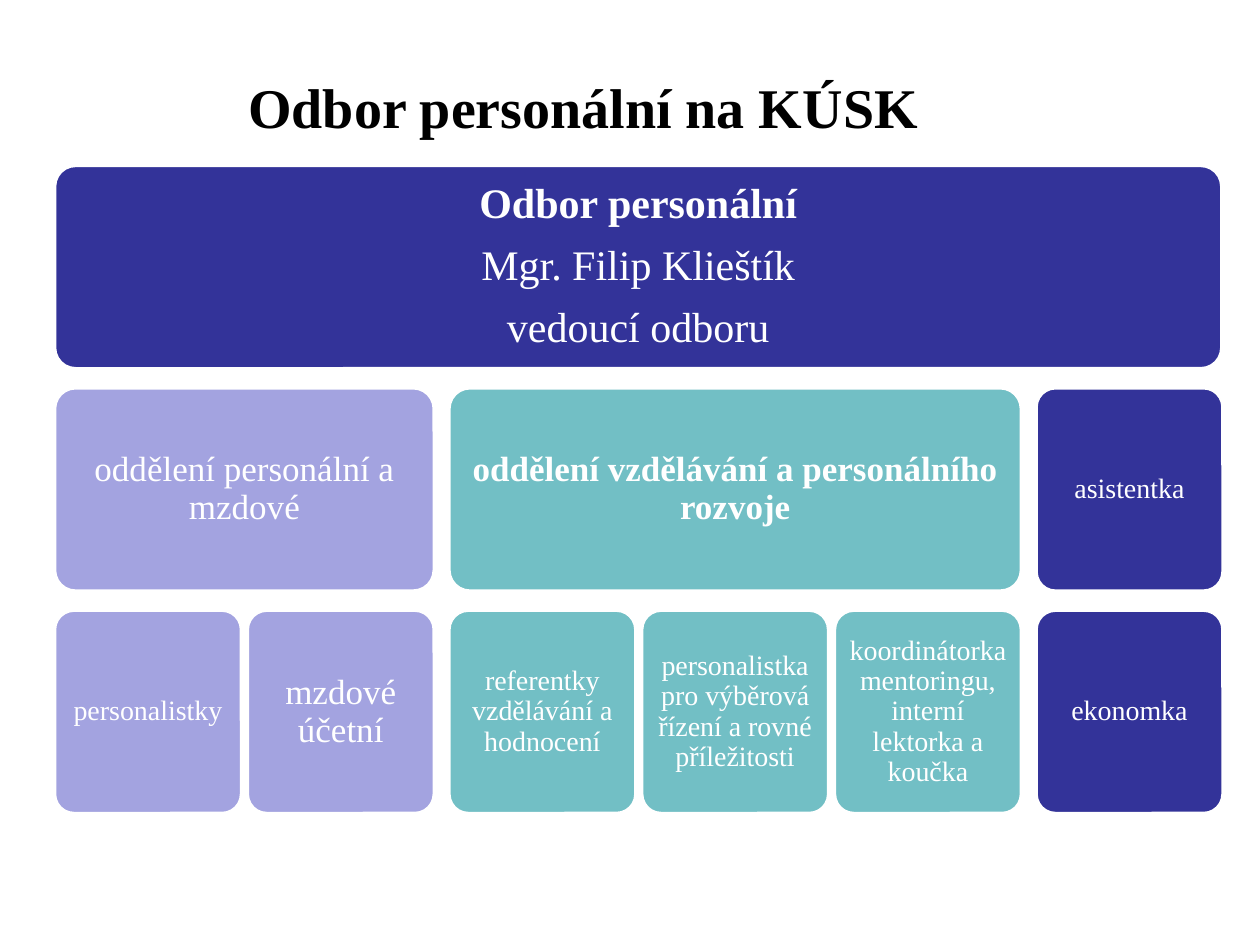
import pptx
import pptx.util
from pptx.dml.color import RGBColor
from pptx.enum.shapes import MSO_SHAPE
from pptx.enum.text import MSO_ANCHOR, PP_ALIGN

NAVY = RGBColor(0x33, 0x33, 0x99)
LILAC = RGBColor(0xA3, 0xA3, 0xE0)
TEAL = RGBColor(0x72, 0xBF, 0xC5)
WHITE = RGBColor(0xFF, 0xFF, 0xFF)
BLACK = RGBColor(0x00, 0x00, 0x00)
FONT = "Times New Roman"

# Chart grid in inches: six columns in three groups, three rows
CARD_WIDTH, CARD_HEIGHT = 1.47, 1.6
CARD_GAP, GROUP_GAP = 0.06, 0.13

# Each group: colour, head (text, size, bold), cards below it (text, size)
GROUPS = [
    (LILAC, ("oddělení personální a mzdové", 20, False),
     [("personalistky", 16), ("mzdové účetní", 20)]),
    (TEAL, ("oddělení vzdělávání a personálního rozvoje", 20, True),
     [("referentky vzdělávání a hodnocení", 16),
      ("personalistka pro výběrová řízení a rovné příležitosti", 16),
      ("koordinátorka mentoringu, interní lektorka a koučka", 16)]),
    (NAVY, ("asistentka", 16, False), [("ekonomka", 16)]),
]


def style_text(para, size, bold, color):
    for span in para.runs:
        span.font.name = FONT
        span.font.size = pptx.util.Pt(size)
        span.font.bold = bold
        span.font.color.rgb = color


def set_margins(frame, inset):
    frame.margin_left = frame.margin_right = pptx.util.Inches(inset)
    frame.margin_top = frame.margin_bottom = pptx.util.Inches(inset)


def add_title(page, left, top, width, height):
    box = page.shapes.add_textbox(*map(pptx.util.Inches, (left, top, width, height)))
    frame = box.text_frame
    frame.word_wrap = True
    frame.vertical_anchor = MSO_ANCHOR.BOTTOM
    set_margins(frame, 0)
    frame.text = "Odbor personální na KÚSK"
    style_text(frame.paragraphs[0], 32, True, BLACK)


def add_card(page, left, top, width, color, lines, inset=0.07):
    """Add a rounded card; lines holds (text, size, bold) for each paragraph."""
    card = page.shapes.add_shape(
        MSO_SHAPE.ROUNDED_RECTANGLE,
        *map(pptx.util.Inches, (left, top, width, CARD_HEIGHT)))
    card.adjustments[0] = 0.1
    card.shadow.inherit = False
    card.fill.solid()
    card.fill.fore_color.rgb = color
    card.line.color.rgb = WHITE
    card.line.width = pptx.util.Pt(1)
    frame = card.text_frame
    frame.word_wrap = True
    frame.vertical_anchor = MSO_ANCHOR.MIDDLE
    set_margins(frame, inset)
    frame.text = "\n".join(text for text, _, _ in lines)
    for para, (_, size, bold) in zip(frame.paragraphs, lines):
        para.alignment = PP_ALIGN.CENTER
        para.line_spacing = 0.9
        style_text(para, size, bold, WHITE)
    for para in frame.paragraphs[:-1]:
        para.space_after = pptx.util.Pt(9.5)


def add_org_chart(page, left, top, width, height):
    row_step = (height - CARD_HEIGHT) / 2

    # Head of the department
    add_card(page, left, top, width, NAVY,
             [("Odbor personální", 24, True),
              ("Mgr. Filip Klieštík", 24, False),
              ("vedoucí odboru", 24, False)], 0.1)

    # Units with their staff below
    group_left = left
    for color, head, staff in GROUPS:
        group_width = len(staff) * (CARD_WIDTH + CARD_GAP) - CARD_GAP
        add_card(page, group_left, top + row_step, group_width, color, [head])
        for column, (text, size) in enumerate(staff):
            card_left = group_left + column * (CARD_WIDTH + CARD_GAP)
            add_card(page, card_left, top + 2 * row_step, CARD_WIDTH, color,
                     [(text, size, False)])
        group_left += group_width + GROUP_GAP


def main():
    deck = pptx.Presentation()
    deck.slide_width = pptx.util.Inches(10)
    deck.slide_height = pptx.util.Inches(7.5)
    page = deck.slides.add_slide(deck.slide_layouts[6])
    add_title(page, 1.97, 0.53, 7.41, 0.58)
    add_org_chart(page, 0.44, 1.32, 9.25, 5.13)
    deck.save("out.pptx")


if __name__ == "__main__":
    main()
